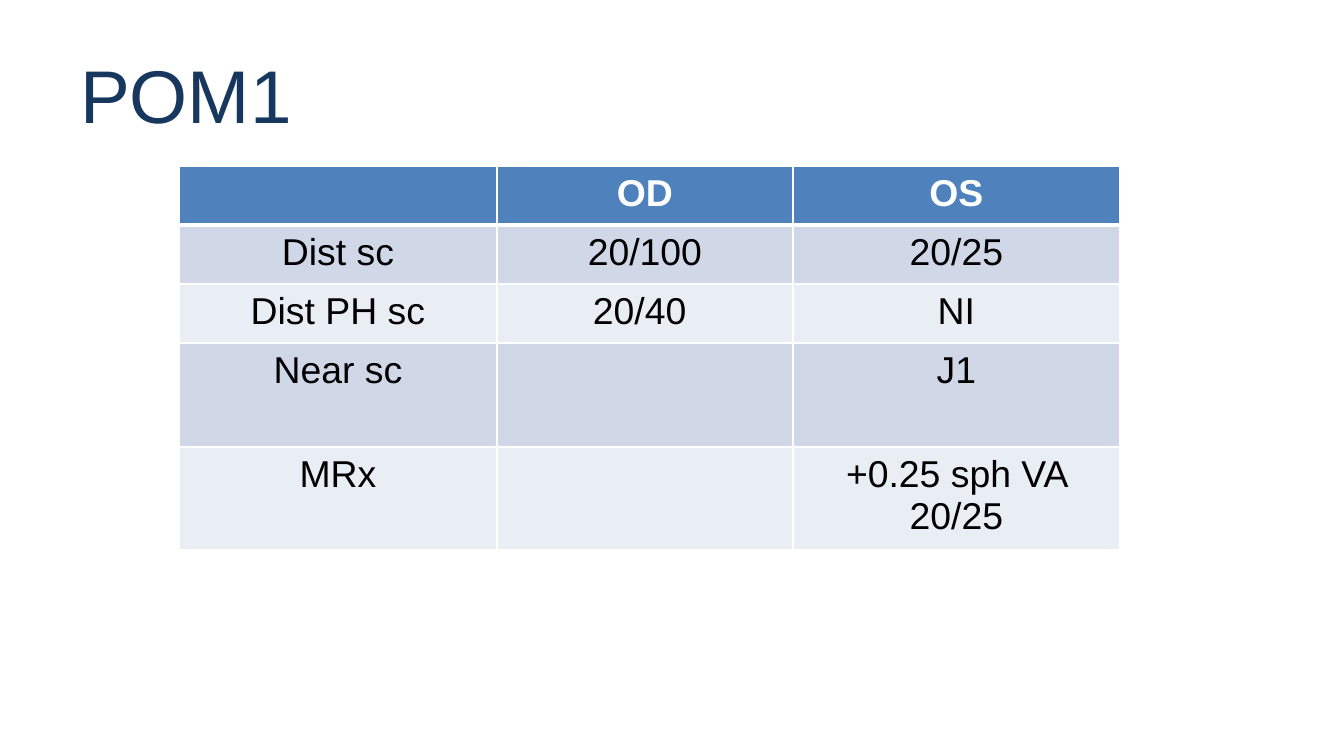
from dataclasses import dataclass

from lxml.etree import SubElement
from pptx import Presentation
from pptx.dml.color import RGBColor
from pptx.enum.text import MSO_ANCHOR, PP_ALIGN
from pptx.oxml.ns import qn
from pptx.util import Emu, Pt

SLIDE_WIDTH = 1344
SLIDE_HEIGHT = 756
EMU_PER_PX = 9144000 / SLIDE_WIDTH


@dataclass(frozen=True)
class Theme:
    font: str = "Arial"
    title_size: int = 40
    cell_size: int = 20
    title_color: str = "17375E"
    header_fill: str = "4F81BD"
    header_text: str = "FFFFFF"
    body_text: str = "000000"
    band_fills: tuple[str, str] = ("D0D8E8", "E9EDF4")
    border_color: str = "FFFFFF"
    border_width: int = 1
    header_rule_width: int = 3


@dataclass(frozen=True)
class Box:
    left: int
    top: int
    width: int
    height: int

    def emu(self) -> tuple[Emu, ...]:
        return tuple(px(n) for n in (self.left, self.top, self.width, self.height))


@dataclass(frozen=True)
class AcuityRow:
    label: str
    right_eye: str
    left_eye: str
    height: int = 59

    def texts(self) -> tuple[str, str, str]:
        return self.label, self.right_eye, self.left_eye


THEME = Theme()
TITLE_BOX = Box(67, 31, 1210, 126)
TABLE_LEFT, TABLE_TOP = 179, 166
COLUMN_WIDTHS = (318, 296, 327)
ROWS = (
    AcuityRow("", "OD", "OS"),
    AcuityRow("Dist sc", "20/100", "20/25"),
    AcuityRow("Dist PH sc", "20/40 ", "NI"),
    AcuityRow("Near sc", "", "J1", 104),
    AcuityRow("MRx", "", "+0.25 sph VA 20/25", 97),
)


def px(length: int) -> Emu:
    return Emu(round(length * EMU_PER_PX))


def style_paragraph(para, size: int, color: str, bold: bool = False) -> None:
    font = para.font
    font.name = THEME.font
    font.size = Pt(size)
    font.bold = bold
    font.color.rgb = RGBColor.from_string(color)


def draw_title(page, text: str, box: Box) -> None:
    frame = page.shapes.add_textbox(*box.emu()).text_frame
    frame.word_wrap = True
    frame.vertical_anchor = MSO_ANCHOR.MIDDLE
    frame.text = text
    style_paragraph(frame.paragraphs[0], THEME.title_size, THEME.title_color)


def add_border(cell, side: str, width: int) -> None:
    properties = cell._tc.get_or_add_tcPr()
    line = SubElement(properties, qn(f"a:ln{side}"), w=str(Pt(width)))
    fill = SubElement(line, qn("a:solidFill"))
    SubElement(fill, qn("a:srgbClr"), val=THEME.border_color)


def draw_cell(cell, text: str, row_index: int) -> None:
    header = row_index == 0
    for side in "LRTB":
        header_rule = (header and side == "B") or (row_index == 1 and side == "T")
        add_border(cell, side, THEME.header_rule_width if header_rule else THEME.border_width)
    fill = THEME.header_fill if header else THEME.band_fills[(row_index - 1) % 2]
    cell.fill.solid()
    cell.fill.fore_color.rgb = RGBColor.from_string(fill)
    cell.text = text
    para = cell.text_frame.paragraphs[0]
    para.alignment = PP_ALIGN.CENTER
    style_paragraph(para, THEME.cell_size, THEME.header_text if header else THEME.body_text, header)


def draw_table(page, rows: tuple[AcuityRow, ...]) -> None:
    box = Box(TABLE_LEFT, TABLE_TOP, sum(COLUMN_WIDTHS), sum(row.height for row in rows))
    table = page.shapes.add_table(len(rows), len(COLUMN_WIDTHS), *box.emu()).table
    for column, width in zip(table.columns, COLUMN_WIDTHS):
        column.width = px(width)
    for row_index, row in enumerate(rows):
        table.rows[row_index].height = px(row.height)
        for column_index, text in enumerate(row.texts()):
            draw_cell(table.cell(row_index, column_index), text, row_index)


def main() -> None:
    deck = Presentation()
    deck.slide_width = px(SLIDE_WIDTH)
    deck.slide_height = px(SLIDE_HEIGHT)
    page = deck.slides.add_slide(deck.slide_layouts[6])
    draw_title(page, "POM1", TITLE_BOX)
    draw_table(page, ROWS)
    deck.save("out.pptx")


if __name__ == "__main__":
    main()
